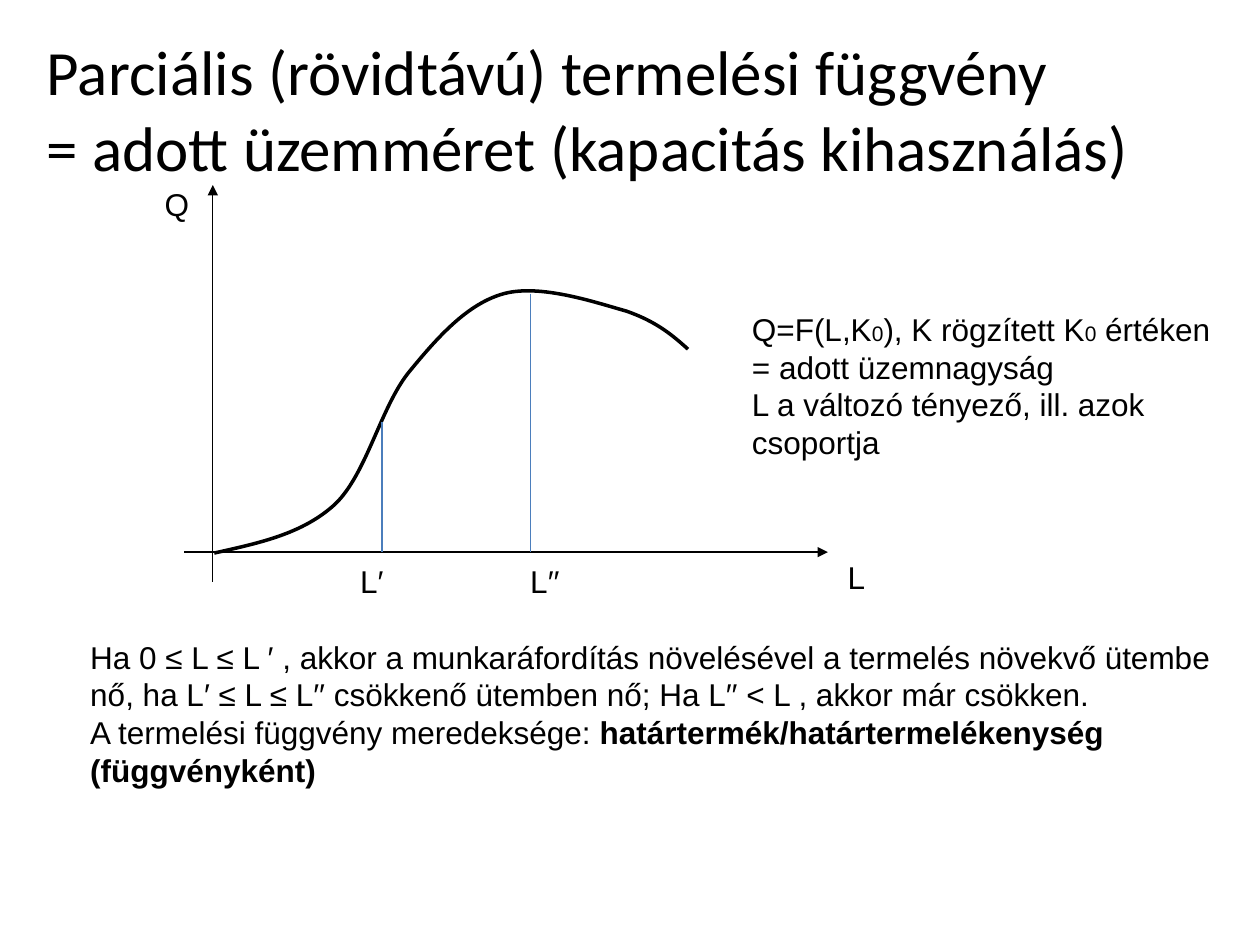
import pptx
import pptx.util
import pptx.dml.color
import pptx.enum.shapes
import pptx.enum.text
import pptx.oxml.ns
import lxml.etree
from dataclasses import dataclass
from typing import NamedTuple

Cm = pptx.util.Cm
Pt = pptx.util.Pt
qn = pptx.oxml.ns.qn
COLORS = {"ink": "000000", "guide": "4B7EBC"}


class Part(NamedTuple):
    text: str
    size: int = 18
    bold: bool = False


@dataclass
class Box:
    left: float
    top: float
    width: float
    height: float
    lines: list[list[Part]]
    wrap: bool = True
    indent: float = 0


@dataclass
class Line:
    start: tuple[float, float]
    end: tuple[float, float]
    color: str = "ink"
    arrow: bool = False


def paint(name: str) -> pptx.dml.color.RGBColor:
    return pptx.dml.color.RGBColor.from_string(COLORS[name])


def style(run, size: int, font: str, bold: bool = False) -> None:
    run.font.size = Pt(size)
    run.font.name = font
    run.font.bold = bold
    run.font.color.rgb = paint("ink")


def draw_title(slide, lines: list[str]) -> None:
    title = slide.shapes.title
    title.left, title.top = Cm(0.69), Cm(0.53)
    title.width, title.height = Cm(23.22), Cm(3.33)
    frame = title.text_frame
    frame.text = "\n".join(lines)
    frame.word_wrap = True
    frame.auto_size = pptx.enum.text.MSO_AUTO_SIZE.NONE
    frame.vertical_anchor = pptx.enum.text.MSO_ANCHOR.TOP
    for para in frame.paragraphs:
        para.alignment = pptx.enum.text.PP_ALIGN.LEFT
        for run in para.runs:
            style(run, 36, "Calibri")


def draw_box(slide, box: Box) -> None:
    shape = slide.shapes.add_textbox(
        Cm(box.left), Cm(box.top), Cm(box.width), Cm(box.height))
    frame = shape.text_frame
    frame.word_wrap = box.wrap
    frame.auto_size = pptx.enum.text.MSO_AUTO_SIZE.SHAPE_TO_FIT_TEXT
    for index, line in enumerate(box.lines):
        para = frame.add_paragraph() if index else frame.paragraphs[0]
        if box.indent:
            para.level = 1
            props = para._p.get_or_add_pPr()
            props.set("marL", str(Cm(box.indent)))
            props.set("indent", "0")
        for part in line:
            run = para.add_run()
            run.text = part.text
            style(run, part.size, "Arial", part.bold)


def draw_line(slide, line: Line) -> None:
    ends = [Cm(value) for value in line.start + line.end]
    shape = slide.shapes.add_connector(
        pptx.enum.shapes.MSO_CONNECTOR.STRAIGHT, *ends)
    shape.line.color.rgb = paint(line.color)
    shape.line.width = Pt(0.75)
    if line.arrow:
        tip = lxml.etree.SubElement(shape.line._get_or_add_ln(), qn("a:tailEnd"))
        tip.set("type", "triangle")
    lxml.etree.SubElement(shape._element.spPr, qn("a:effectLst"))


def draw_curve(slide, points: list[tuple[float, float]]) -> None:
    start, *rest = [(Cm(x), Cm(y)) for x, y in points]
    builder = slide.shapes.build_freeform(*start)
    builder.add_line_segments(rest, close=False)
    shape = builder.convert_to_shape()
    steps = list(shape._element.iter(qn("a:lnTo")))
    for index in range(0, len(steps), 3):
        bend = lxml.etree.Element(qn("a:cubicBezTo"))
        steps[index].addprevious(bend)
        for step in steps[index:index + 3]:
            bend.append(step[0])
            step.getparent().remove(step)
    shape.shadow.inherit = False
    shape.fill.background()
    shape.line.color.rgb = paint("ink")
    shape.line.width = Pt(2)


BASE = 11.13
LINES = [
    Line((4.29, 11.73), (4.29, 3.73), arrow=True),
    Line((3.71, BASE), (16.69, BASE), arrow=True),
    Line((10.69, 5.92), (10.69, BASE), "guide"),
    Line((7.7, 8.51), (7.7, BASE), "guide"),
]
CURVE = [
    (4.32, 11.15),
    (5.21, 10.95), (6.1, 10.77), (6.76, 10.16),
    (7.39, 9.55), (7.67, 8.23), (8.23, 7.52),
    (8.81, 6.81), (9.42, 6.12), (10.16, 5.92),
    (10.9, 5.72), (12.01, 6.1), (12.62, 6.27),
    (13.23, 6.48), (13.56, 6.76), (13.87, 7.04),
]
BOXES = [
    Box(16.84, BASE, 0.86, 1.02, [[Part("L")]], wrap=False),
    Box(3.07, 3.61, 1.02, 1.02, [[Part("Q")]], wrap=False),
    Box(10.44, 11.2, 6.83, 1.02, [[Part("L′′")]]),
    Box(7.01, 11.2, 0.99, 1.02, [[Part("L′")]], wrap=False),
    Box(14.91, 6.12, 9.8, 3.33, [
        [Part("Q=F(L,K"), Part("0", 12), Part("), K rögzített K"),
         Part("0", 12), Part(" értéken")],
        [Part("= adott üzemnagyság")],
        [Part("L a változó tényező, ill. azok csoportja")],
    ]),
    Box(0.3, 12.73, 24.41, 3.33, [
        [Part("Ha 0 ≤ L ≤ L ′ , akkor a munkaráfordítás növelésével a termelés "
              "növekvő ütembe nő, ha L′ ≤ L ≤ L′′ csökkenő ütemben nő; "
              "Ha L′′ < L , akkor már csökken.")],
        [Part("A termelési függvény meredeksége: "),
         Part("határtermék/határtermelékenység", bold=True)],
        [Part("(függvényként)", bold=True)],
    ], indent=1.27),
]


def main() -> None:
    deck = pptx.Presentation()
    deck.slide_width, deck.slide_height = Cm(25.4), Cm(19.05)
    slide = deck.slides.add_slide(deck.slide_layouts[5])
    draw_title(slide, ["Parciális (rövidtávú) termelési függvény",
                       "= adott üzemméret (kapacitás kihasználás)"])
    draw_curve(slide, CURVE)
    for line in LINES:
        draw_line(slide, line)
    for box in BOXES:
        draw_box(slide, box)
    deck.save("out.pptx")


if __name__ == "__main__":
    main()
